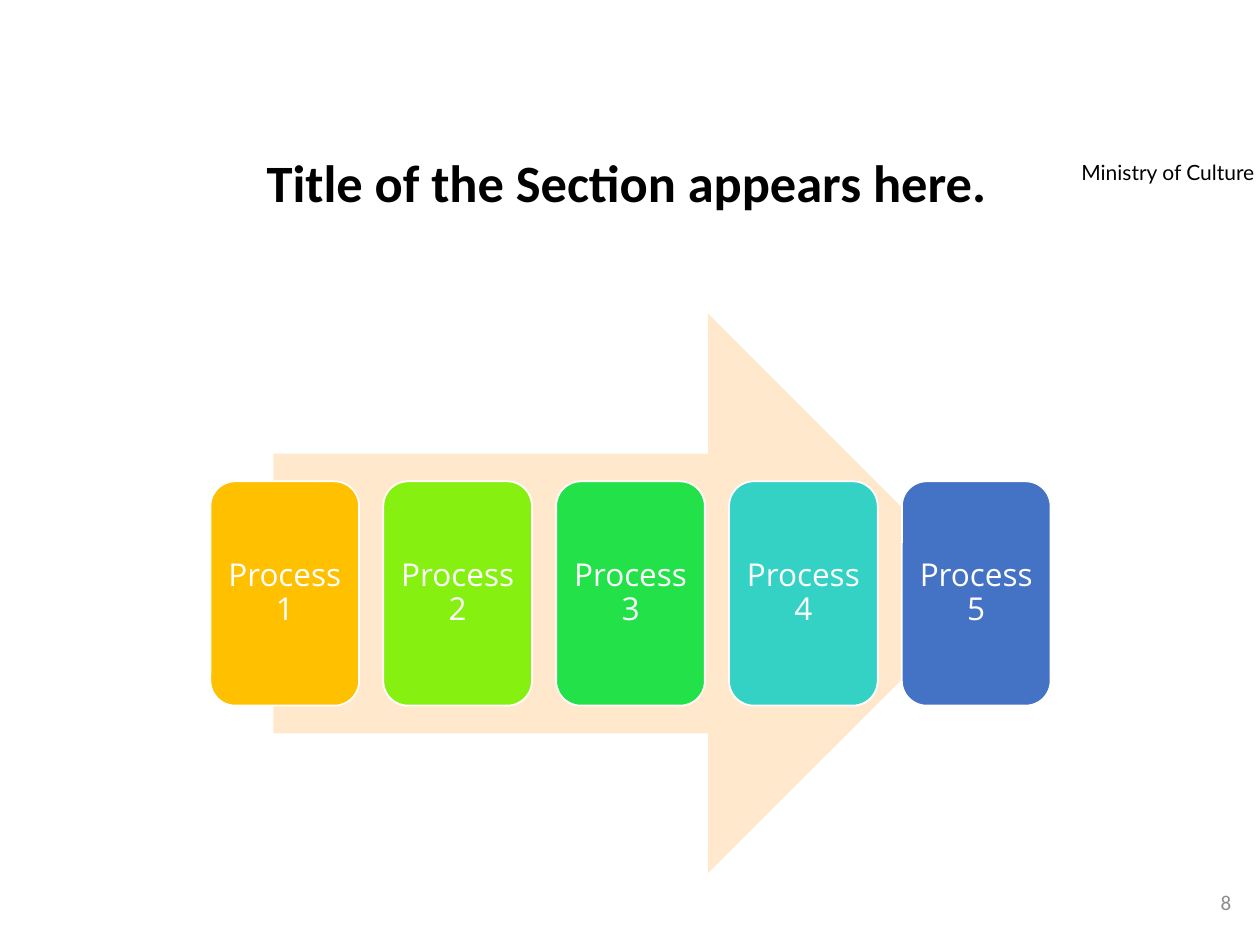
from pptx import Presentation
from pptx.dml.color import RGBColor
from pptx.enum import shapes, text
from pptx.util import Inches, Pt


def set_font(paragraph, name, size, color, bold=False):
    font = paragraph.font
    font.name, font.size, font.bold = name, Pt(size), bold
    font.color.rgb = RGBColor.from_string(color)


def add_filled_shape(kind, left, top, width, height, fill):
    shape = slide.shapes.add_shape(
        kind, Inches(left), Inches(top), Inches(width), Inches(height))
    shape.shadow.inherit = False
    shape.fill.solid()
    shape.fill.fore_color.rgb = RGBColor.from_string(fill)
    shape.line.fill.background()
    return shape


presentation = Presentation()
presentation.slide_width = Inches(10)
presentation.slide_height = Inches(7.5)
slide = presentation.slides.add_slide(presentation.slide_layouts[5])

# Title
title = slide.shapes.title
title.left, title.top = Inches(1.26), Inches(1.2)
title.width, title.height = Inches(7.43), Inches(0.79)
title.text_frame.text = "Title of the Section appears here."
title.text_frame.vertical_anchor = text.MSO_ANCHOR.TOP
title.text_frame.auto_size = text.MSO_AUTO_SIZE.NONE
paragraph = title.text_frame.paragraphs[0]
paragraph.alignment = text.PP_ALIGN.CENTER
paragraph.line_spacing = 0.9
set_font(paragraph, "Calibri", 30, "000000", bold=True)

# Ministry name and page number
labels = [
    ("Ministry of Culture", (8.18, 1.22, 2.18, 0.3), "Lato", "000000",
     text.PP_ALIGN.CENTER, text.MSO_ANCHOR.TOP),
    ("8", (7.62, 6.96, 2.25, 0.4), "Calibri", "8C8C8C",
     text.PP_ALIGN.RIGHT, text.MSO_ANCHOR.MIDDLE),
]
for wording, position, font_name, color, alignment, anchor in labels:
    label = slide.shapes.add_textbox(*map(Inches, position))
    label.text_frame.word_wrap = True
    label.text_frame.vertical_anchor = anchor
    label.text_frame.text = wording
    paragraph = label.text_frame.paragraphs[0]
    paragraph.alignment = alignment
    set_font(paragraph, font_name, 12, color)

# Arrow behind the process steps
add_filled_shape(shapes.MSO_SHAPE.RIGHT_ARROW, 2.17, 2.49, 5.67, 4.44, "FFE8CC")

# Process steps
step_colors = ["FFC000", "86F011", "23E148", "33D2C5", "4472C4"]
for index, color in enumerate(step_colors):
    step = add_filled_shape(shapes.MSO_SHAPE.ROUNDED_RECTANGLE,
                            1.67 + 1.372 * index, 3.82, 1.18, 1.78, color)
    step.line.color.rgb = RGBColor.from_string("FFFFFF")
    step.line.width = Pt(1)
    frame = step.text_frame
    frame.word_wrap = True
    frame.vertical_anchor = text.MSO_ANCHOR.MIDDLE
    frame.margin_left = frame.margin_right = Inches(0.07)
    frame.margin_top = frame.margin_bottom = Inches(0.07)
    frame.text = f"Process {index + 1}"
    paragraph = frame.paragraphs[0]
    paragraph.alignment = text.PP_ALIGN.CENTER
    paragraph.line_spacing = 0.9
    set_font(paragraph, "Open Sans", 18, "FFFFFF")

presentation.save("out.pptx")
